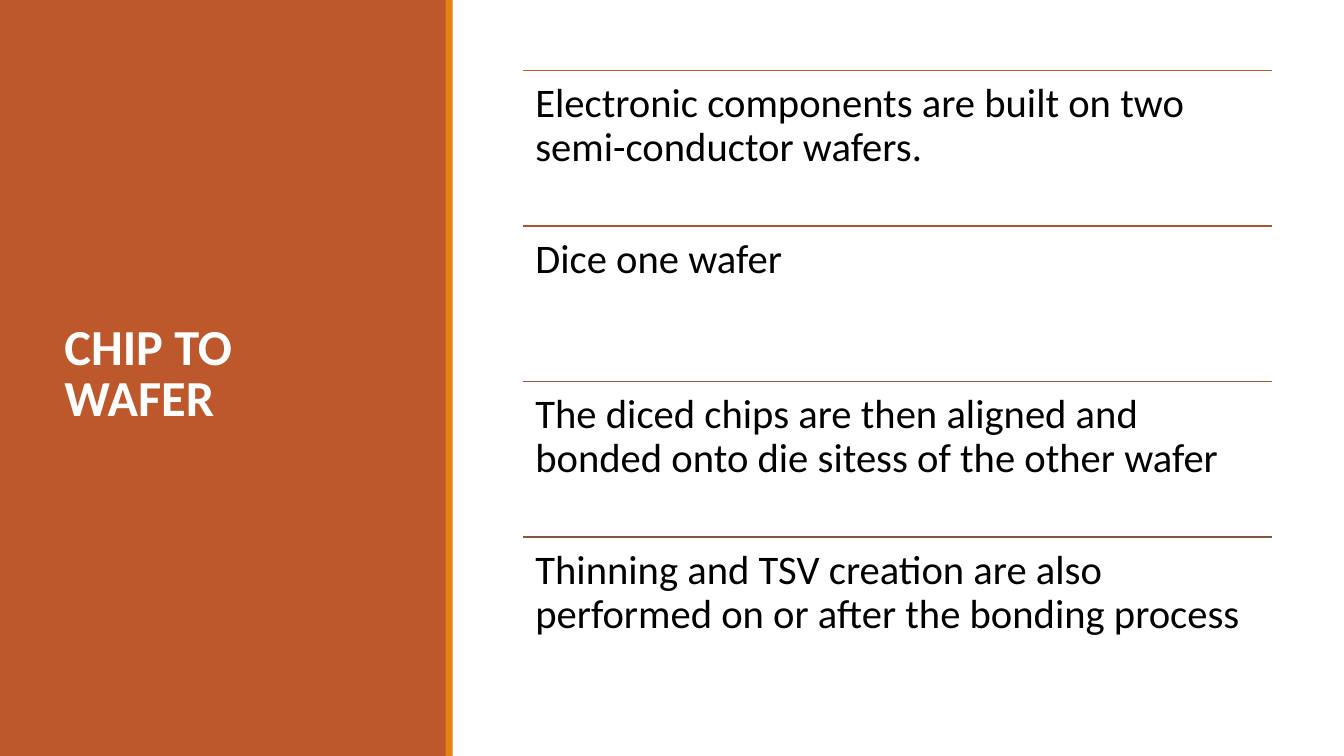
import pptx
import pptx.util
import pptx.dml.color
import pptx.enum.shapes
import pptx.enum.text
import pptx.oxml.ns
import lxml.etree

Inches = pptx.util.Inches

TITLE = "CHIP TO WAFER"
STEPS = [
    ("Electronic components are built on two semi-conductor wafers.", "BB582B"),
    ("Dice one wafer", "A85733"),
    ("The diced chips are then aligned and bonded onto die sitess of the other wafer", "965639"),
    ("Thinning and TSV creation are also performed on or after the bonding process", "84543F"),
]
COLORS = {"panel": "BD582C", "stripe": "E48312", "white": "FFFFFF", "black": "000000"}
FONT = "Calibri"
LEFT, TOP, WIDTH, PITCH = 5.19, 0.7, 7.43, 1.543


def rgb(code):
    return pptx.dml.color.RGBColor.from_string(code)


def add_bar(slide, left, width, color):
    bar = slide.shapes.add_shape(
        pptx.enum.shapes.MSO_SHAPE.RECTANGLE,
        Inches(left), 0, Inches(width), Inches(7.5))
    bar.shadow.inherit = False
    bar.fill.solid()
    bar.fill.fore_color.rgb = rgb(color)
    bar.line.fill.background()


def add_text(slide, text, box, size, color, bold=False, spacing=0.9,
             inset=(0.12, 0.12), anchor="TOP"):
    frame = slide.shapes.add_textbox(*map(Inches, box)).text_frame
    frame.word_wrap = True
    frame.vertical_anchor = pptx.enum.text.MSO_ANCHOR[anchor]
    frame.margin_left = frame.margin_right = Inches(inset[0])
    frame.margin_top = frame.margin_bottom = Inches(inset[1])
    para = frame.paragraphs[0]
    para.line_spacing = spacing
    run = para.add_run()
    run.text = text
    run.font.name = FONT
    run.font.size = pptx.util.Pt(size)
    run.font.bold = bold
    run.font.color.rgb = rgb(color)


def add_rule(slide, top, color):
    rule = slide.shapes.add_connector(
        pptx.enum.shapes.MSO_CONNECTOR.STRAIGHT,
        Inches(LEFT), Inches(top), Inches(LEFT + WIDTH), Inches(top))
    rule.line.color.rgb = rgb(color)
    rule.line.width = pptx.util.Pt(1.25)
    lxml.etree.SubElement(rule.element.spPr, pptx.oxml.ns.qn("a:effectLst"))


def main():
    deck = pptx.Presentation()
    deck.slide_width, deck.slide_height = Inches(13.33), Inches(7.5)
    slide = deck.slides.add_slide(deck.slide_layouts[6])

    add_bar(slide, 0, 4.43, COLORS["panel"])
    add_text(slide, TITLE, (0.54, 0.57, 3.37, 6.31), 36, COLORS["white"],
             bold=True, spacing=0.85, inset=(0.1, 0.05), anchor="MIDDLE")
    add_bar(slide, 4.42, 0.07, COLORS["stripe"])

    for i, (text, color) in enumerate(STEPS):
        top = TOP + i * PITCH
        add_rule(slide, top, color)
        add_text(slide, text, (LEFT, top, WIDTH, PITCH), 29, COLORS["black"])

    deck.save("out.pptx")


if __name__ == "__main__":
    main()
